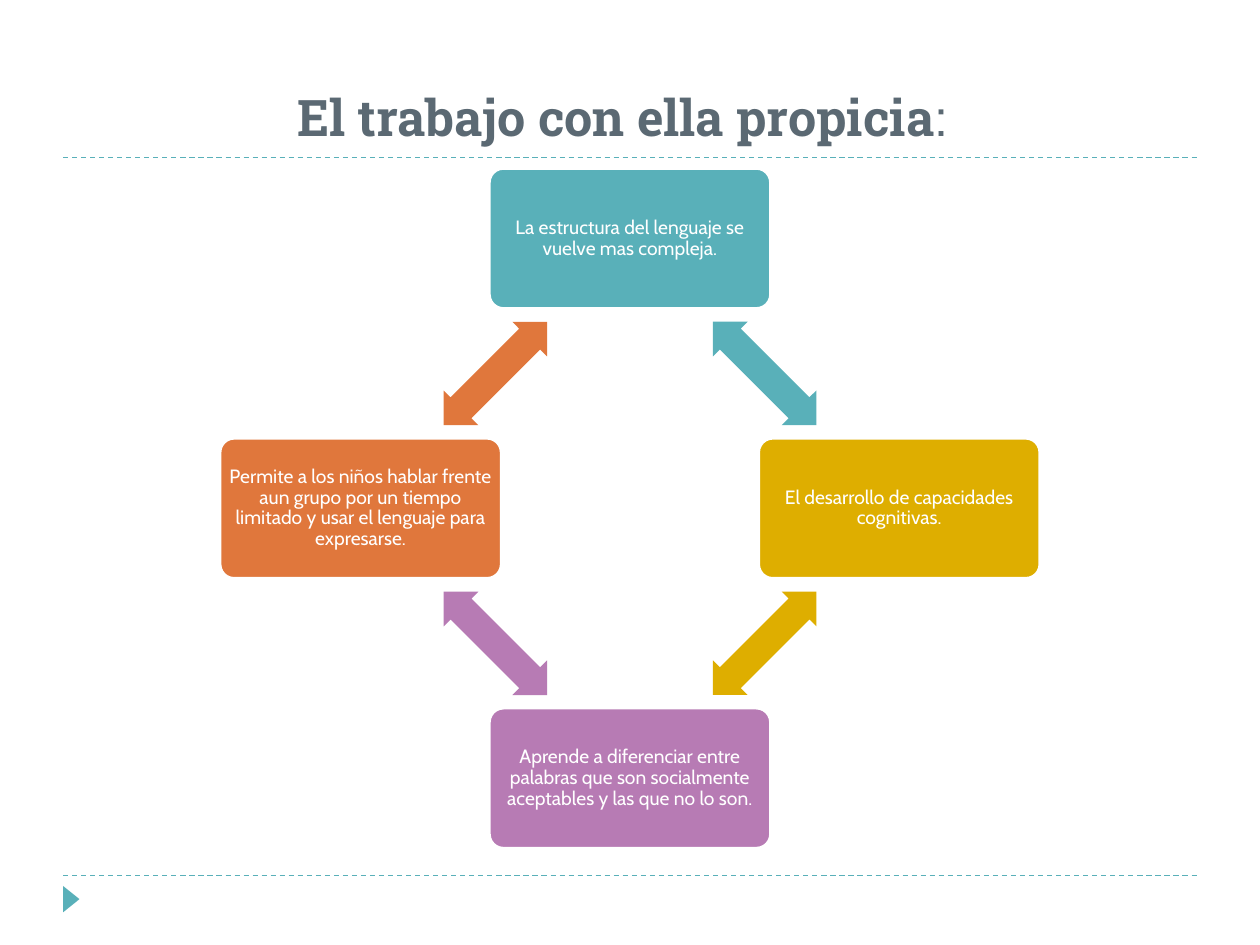
import pptx
import pptx.util
import pptx.dml.color
import pptx.enum.dml
import pptx.enum.shapes
import pptx.enum.text

Pt = pptx.util.Pt
Kind = pptx.enum.shapes.MSO_SHAPE
Anchor = pptx.enum.text.MSO_ANCHOR
Align = pptx.enum.text.PP_ALIGN

COLORS = {
    "teal": "59B0B9",
    "gold": "DEAE00",
    "mauve": "B77BB4",
    "orange": "E0773C",
    "slate": "5B6973",
    "white": "FFFFFF",
}

# Clockwise from the top
STEPS = [
    ("teal", "La estructura del lenguaje se vuelve mas compleja."),
    ("gold", "El desarrollo de capacidades cognitivas."),
    ("mauve", "Aprende a diferenciar entre palabras que son socialmente "
              "aceptables y las que no lo son."),
    ("orange", "Permite a los niños hablar frente aun grupo por un tiempo "
               "limitado y usar el lenguaje para expresarse."),
]


def color(name):
    return pptx.dml.color.RGBColor.from_string(COLORS[name])


def add_shape(slide, kind, mid, size, fill, turn=0):
    """Add a flat shape centred on mid."""
    (x, y), (w, h) = mid, size
    shape = slide.shapes.add_shape(
        kind, Pt(x - w / 2), Pt(y - h / 2), Pt(w), Pt(h))
    shape.shadow.inherit = False
    shape.fill.solid()
    shape.fill.fore_color.rgb = color(fill)
    shape.line.fill.background()
    shape.rotation = turn
    return shape


def add_frame(slide, box):
    """Dashed rules at the top and bottom of the box, and a corner mark."""
    x, y, w, h = box
    for row in (y, y + h):
        rule = slide.shapes.add_connector(
            pptx.enum.shapes.MSO_CONNECTOR.STRAIGHT,
            Pt(x), Pt(row), Pt(x + w), Pt(row))
        rule.line.color.rgb = color("teal")
        rule.line.width = Pt(0.75)
        rule.line.dash_style = pptx.enum.dml.MSO_LINE.DASH
        props = rule._element.spPr
        props.append(props.makeelement(pptx.oxml.ns.qn("a:effectLst"), {}))
    add_shape(slide, Kind.ISOSCELES_TRIANGLE, (x + 4.7, y + h + 13.4),
              (15.1, 9.4), "teal", 90)


def add_title(slide, box):
    title = slide.shapes.title
    title.left, title.top, title.width, title.height = map(Pt, box)
    frame = title.text_frame
    frame.word_wrap = True
    frame.auto_size = pptx.enum.text.MSO_AUTO_SIZE.NONE
    frame.vertical_anchor = Anchor.BOTTOM
    para = frame.paragraphs[0]
    para.alignment = Align.CENTER
    para.font.name = "Roboto Slab"
    para.font.size = Pt(28.8)
    para.font.color.rgb = color("slate")
    for text, bold in (("El trabajo con ella propicia", True), (":", False)):
        run = para.add_run()
        run.text = text
        run.font.bold = bold


def add_card(slide, mid, size, fill, text):
    card = add_shape(slide, Kind.ROUNDED_RECTANGLE, mid, size, fill)
    card.adjustments[0] = 0.1
    card.line.color.rgb = color("white")
    card.line.width = Pt(1.5)
    frame = card.text_frame
    frame.word_wrap = True
    frame.vertical_anchor = Anchor.MIDDLE
    frame.margin_left = frame.margin_right = Pt(1.3)
    frame.margin_top = frame.margin_bottom = Pt(1.3)
    para = frame.paragraphs[0]
    para.text = text
    para.alignment = Align.CENTER
    para.line_spacing = 0.9
    para.font.name = "Cabin"
    para.font.size = Pt(11)
    para.font.color.rgb = color("white")


def add_cycle(slide, box):
    """Cards on the four sides of the box, joined by two-way arrows."""
    x, y, w, h = box
    card = (160.6, 80)
    dx, dy = (w - card[0]) / 2, (h - card[1]) / 2
    mx, my = x + w / 2, y + h / 2
    spots = [(mx, my - dy), (mx + dx, my), (mx, my + dy), (mx - dx, my)]
    for i, (fill, text) in enumerate(STEPS):
        here, after = spots[i], spots[(i + 1) % len(spots)]
        add_card(slide, here, card, fill, text)
        half = ((here[0] + after[0]) / 2, (here[1] + after[1]) / 2)
        arrow = add_shape(slide, Kind.LEFT_RIGHT_ARROW, half, (83.5, 28),
                          fill, 45 + 90 * i)
        arrow.adjustments[0] = 0.6
        arrow.adjustments[1] = 0.5


def main():
    deck = pptx.Presentation()
    deck.slide_width, deck.slide_height = Pt(720), Pt(540)
    slide = deck.slides.add_slide(deck.slide_layouts[5])
    add_frame(slide, (36, 90, 648, 410.4))
    add_title(slide, (31, 9.4, 648, 77.8))
    add_cycle(slide, (125.8, 96.3, 468.4, 388.4))
    deck.save("out.pptx")


if __name__ == "__main__":
    main()
